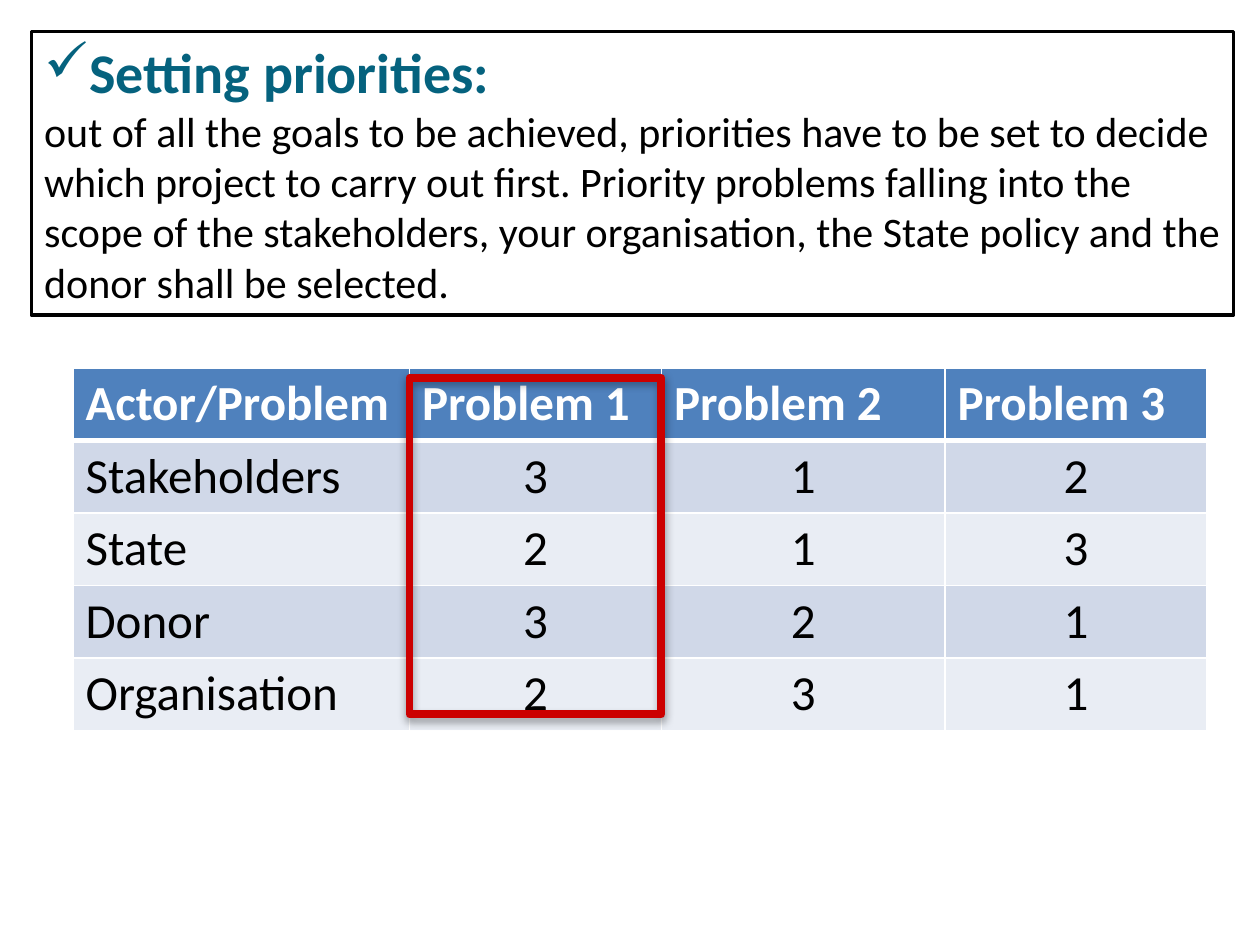
"""Build the slide on setting priorities among problems."""
from dataclasses import dataclass

from lxml import etree
from pptx import Presentation
from pptx import util as u
from pptx.dml.color import RGBColor
from pptx.enum import shapes, text
from pptx.oxml import ns

FONT = "Calibri"
COLORS = {
    "heading": "05627E", "ink": "000000", "white": "FFFFFF", "header": "4F81BD",
    "odd": "D0D8E8", "even": "E9EDF4", "highlight": "CC0000",
}
COLUMNS = (2.67, 2, 2.25, 2.08)
ROW_HEIGHT = 2.83 / 5
INSET = 0.08


@dataclass(frozen=True)
class Box:
    left: float
    top: float
    width: float
    height: float

    def emu(self) -> tuple:
        return tuple(u.Inches(v) for v in (self.left, self.top, self.width, self.height))


@dataclass(frozen=True)
class Score:
    actor: str
    problems: tuple


HEADINGS = ("Actor/Problem", "Problem 1", "Problem 2", "Problem 3")
SCORES = (
    Score("Stakeholders", (3, 1, 2)),
    Score("State", (2, 1, 3)),
    Score("Donor", (3, 2, 1)),
    Score("Organisation", (2, 3, 1)),
)
EXPLANATION = (
    "out of all the goals to be achieved, priorities have to be set to decide which "
    "project to carry out first. Priority problems falling into the scope of the "
    "stakeholders, your organisation, the State policy and the donor shall be selected."
)
INTRO = Box(0.25, 0.25, 9.54, 2.25)
GRID = Box(0.58, 2.92, sum(COLUMNS), ROW_HEIGHT * 5)


def rgb(name: str) -> RGBColor:
    return RGBColor.from_string(COLORS[name])


def write(paragraph, words: str, *, size: float, color: str = "ink",
          bold: bool = False, align=text.PP_ALIGN.LEFT) -> None:
    paragraph.alignment = align
    run = paragraph.add_run()
    run.text = words
    run.font.name, run.font.size, run.font.bold = FONT, u.Pt(size), bold
    run.font.color.rgb = rgb(color)


def outline(shape, color: str, width: float) -> None:
    shape.fill.background()
    shape.line.color.rgb = rgb(color)
    shape.line.width = u.Pt(width)


def add_check_bullet(paragraph, indent: float) -> None:
    properties = paragraph._p.get_or_add_pPr()
    properties.set("marL", str(u.Inches(indent)))
    properties.set("indent", str(-u.Inches(indent)))
    etree.SubElement(properties, ns.qn("a:buChar"), char="✓")


def add_intro(slide) -> None:
    intro = slide.shapes.title
    intro.left, intro.top, intro.width, intro.height = INTRO.emu()
    outline(intro, "ink", 2.25)
    frame = intro.text_frame
    frame.word_wrap = True
    frame.auto_size = text.MSO_AUTO_SIZE.NONE
    frame.vertical_anchor = text.MSO_ANCHOR.TOP
    heading = frame.paragraphs[0]
    write(heading, "Setting priorities:", size=32, color="heading", bold=True)
    add_check_bullet(heading, 0.36)
    write(frame.add_paragraph(), EXPLANATION, size=24)


def add_borders(cell, row: int) -> None:
    widths = {"L": 1, "R": 1, "T": 3 if row == 1 else 1, "B": 3 if row == 0 else 1}
    properties = cell._tc.get_or_add_tcPr()
    for side, width in widths.items():
        line = etree.SubElement(properties, ns.qn(f"a:ln{side}"), w=str(u.Pt(width)))
        fill = etree.SubElement(line, ns.qn("a:solidFill"))
        etree.SubElement(fill, ns.qn("a:srgbClr"), val=COLORS["white"])


def add_scores(slide) -> None:
    rows = [HEADINGS] + [(score.actor, *score.problems) for score in SCORES]
    table = slide.shapes.add_table(len(rows), len(COLUMNS), *GRID.emu()).table
    for column, width in zip(table.columns, COLUMNS):
        column.width = u.Inches(width)
    for r, values in enumerate(rows):
        table.rows[r].height = u.Inches(ROW_HEIGHT)
        header = r == 0
        background = "header" if header else "odd" if r % 2 else "even"
        for c, value in enumerate(values):
            cell = table.cell(r, c)
            add_borders(cell, r)
            cell.fill.solid()
            cell.fill.fore_color.rgb = rgb(background)
            centred = not header and c > 0
            write(cell.text_frame.paragraphs[0], str(value), size=28, bold=header,
                  color="white" if header else "ink",
                  align=text.PP_ALIGN.CENTER if centred else text.PP_ALIGN.LEFT)


def add_soft_shadow(shape) -> None:
    shape.shadow.inherit = False
    effects = shape._element.spPr.find(ns.qn("a:effectLst"))
    shadow = etree.SubElement(
        effects, ns.qn("a:outerShdw"), blurRad=str(u.Pt(5)), dist=str(u.Pt(1.8)),
        dir="5400000", rotWithShape="0")
    color = etree.SubElement(shadow, ns.qn("a:srgbClr"), val=COLORS["ink"])
    etree.SubElement(color, ns.qn("a:alpha"), val="35000")


def add_highlight(slide, column: int) -> None:
    area = Box(GRID.left + sum(COLUMNS[:column]), GRID.top + INSET,
               COLUMNS[column], GRID.height - 2 * INSET)
    highlight = slide.shapes.add_shape(shapes.MSO_SHAPE.RECTANGLE, *area.emu())
    outline(highlight, "highlight", 4.5)
    add_soft_shadow(highlight)


def main() -> None:
    deck = Presentation()
    deck.slide_width, deck.slide_height = u.Inches(10), u.Inches(7.5)
    slide = deck.slides.add_slide(deck.slide_layouts.get_by_name("Title Only"))
    add_intro(slide)
    add_scores(slide)
    add_highlight(slide, column=1)
    deck.save("out.pptx")


if __name__ == "__main__":
    main()
